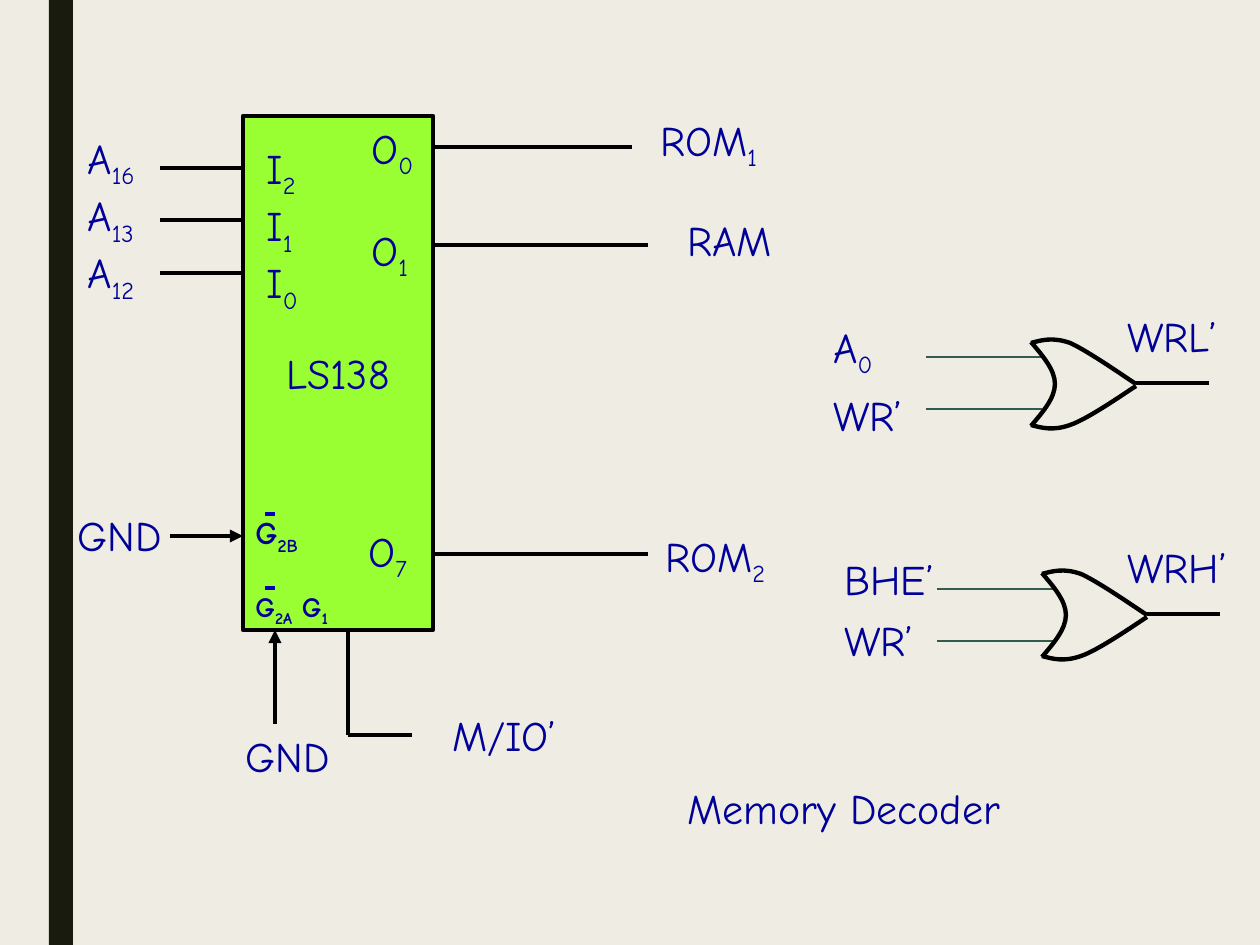
from lxml import etree
from pptx import Presentation
from pptx.dml.color import RGBColor
from pptx.enum.shapes import MSO_CONNECTOR, MSO_SHAPE
from pptx.enum.text import MSO_ANCHOR, MSO_AUTO_SIZE, PP_ALIGN
from pptx.oxml.ns import qn
from pptx.util import Inches, Pt

PX = Inches(1) / 126
STRAIGHT = MSO_CONNECTOR.STRAIGHT
RECTANGLE = MSO_SHAPE.RECTANGLE
GROW = MSO_AUTO_SIZE.SHAPE_TO_FIT_TEXT
FONT = "Comic Neue"
CREAM = RGBColor(0xEF, 0xED, 0xE3)
DARK = RGBColor(0x19, 0x1B, 0x0E)
LIME = RGBColor(0x99, 0xFF, 0x33)
BLACK = RGBColor(0x00, 0x00, 0x00)
NAVY = RGBColor(0x00, 0x00, 0x99)
BLUE = RGBColor(0x00, 0x00, 0xBC)
TEAL = RGBColor(0x31, 0x5C, 0x4F)

prs = Presentation()
prs.slide_width = round(1260 * PX)
prs.slide_height = round(945 * PX)
slide = prs.slides.add_slide(prs.slide_layouts[6])
slide.background.fill.solid()
slide.background.fill.fore_color.rgb = CREAM
shapes = slide.shapes


def add_label(left, top, width, height, lines, size=24, bold=False, after=0):
    """Place signal names, one paragraph each; "_" switches subscript on and off."""
    box = shapes.add_textbox(*(round(v * PX) for v in (left, top, width, height)))
    frame = box.text_frame
    frame.word_wrap = True
    frame.auto_size = GROW
    for number, line in enumerate(lines):
        paragraph = frame.paragraphs[0] if number == 0 else frame.add_paragraph()
        paragraph.space_after = Pt(after)
        for position, text in enumerate(line.split("_")):
            run = paragraph.add_run()
            run.text = text
            run.font.name = FONT
            run.font.size = Pt(size)
            run.font.bold = bold
            run.font.color.rgb = NAVY
            if position % 2:
                run._r.get_or_add_rPr().set("baseline", "-25000")


def add_wire(x1, y1, x2, y2, color=BLACK, width=2.5, arrow=False):
    wire = shapes.add_connector(STRAIGHT, *(round(v * PX) for v in (x1, y1, x2, y2)))
    wire.line.color.rgb = color
    wire.line.width = Pt(width)
    if arrow:
        etree.SubElement(wire.line._get_or_add_ln(), qn("a:tailEnd"), type="triangle")
    etree.SubElement(wire._element.spPr, qn("a:effectLst"))


# Side bar
bar = shapes.add_shape(RECTANGLE, *(round(v * PX) for v in (49, 0, 24, 945)))
bar.shadow.inherit = False
bar.fill.solid()
bar.fill.fore_color.rgb = DARK
bar.line.fill.background()

# Decoder chip
chip = shapes.add_shape(RECTANGLE, *(round(v * PX) for v in (243, 116, 190, 514)))
chip.shadow.inherit = False
chip.fill.solid()
chip.fill.fore_color.rgb = LIME
chip.line.color.rgb = BLACK
chip.line.width = Pt(2.5)
chip.text_frame.word_wrap = False
chip.text_frame.vertical_anchor = MSO_ANCHOR.MIDDLE
chip_title = chip.text_frame.paragraphs[0]
chip_title.alignment = PP_ALIGN.CENTER
chip_name = chip_title.add_run()
chip_name.text = "LS138"
chip_name.font.name = FONT
chip_name.font.size = Pt(24)
chip_name.font.color.rgb = NAVY

# Address inputs, wrapped one to a line by their narrow boxes
for y in (168, 220, 273):
    add_wire(160, y, 243, y)
add_label(75, 126, 94, 165, ["A_16 _A_13 _A_12"])
add_label(254, 136, 84, 164, ["I_2 _I_1_ I_0"])

# Enable inputs
add_wire(275, 724, 275, 630, arrow=True)
add_wire(170, 536, 243, 536, arrow=True)
add_wire(348, 630, 348, 735)
add_wire(348, 735, 412, 735)
for y in (514, 588):
    add_wire(265, y, 275, y, BLUE)
add_label(243, 583, 179, 47, ["G_2A_ G_1"], size=16, bold=True)
add_label(243, 507, 94, 50, ["G_2B"], size=18, bold=True)
add_label(233, 724, 126, 63, ["GND"])
add_label(65, 503, 140, 64, ["GND"])
add_label(440, 703, 192, 63, ["M/IO’"])

# Outputs: pin, pin left and top, wire end and height, device, device left and top
outputs = [
    ("O_0", 359, 116, 632, 147, "ROM_1", 648, 108),
    ("O_1", 359, 218, 648, 245, "RAM", 675, 208),
    ("O_7", 356, 519, 648, 554, "ROM_2", 653, 524),
]
for pin, pin_x, pin_y, wire_x, wire_y, device, device_x, device_y in outputs:
    add_wire(432, wire_y, wire_x, wire_y)
    add_label(pin_x, pin_y, 84, 63, [pin])
    add_label(device_x, device_y, 204, 63, [device])

# OR gates; each outline is a start followed by cubic Bezier triples
gate_outlines = [
    [(0, 0), (12, 14), (24, 28), (24, 42), (24, 56), (12, 70), (0, 84)],
    [(0, 1), (11, -2), (22, -5), (39, 1), (57, 9), (94, 35), (105, 42)],
    [(0, 83), (11, 86), (22, 89), (39, 83), (57, 77), (94, 51), (105, 44)],
]
gates = [
    (1031, 342, (357, 409), 315, ["A_0", "WR’"], "WRL’"),
    (1042, 573, (589, 641), 547, ["BHE’", "WR’"], "WRH’"),
]
for gate_x, gate_y, input_ys, inputs_top, inputs, output in gates:
    for y in input_ys:
        add_wire(gate_x - 105, y, gate_x + 11, y, TEAL, 1)
    add_label(gate_x - 210, inputs_top, 126, 125, inputs, after=6)
    for outline in gate_outlines:
        points = [(round((gate_x + x) * PX), round((gate_y + y) * PX)) for x, y in outline]
        builder = shapes.build_freeform(*points[0])
        builder.add_line_segments(points[1:], close=False)
        edge = builder.convert_to_shape()
        # Join every three line segments into one Bezier curve
        segments = list(edge._element.iter(qn("a:lnTo")))
        for first in range(0, len(segments), 3):
            curve = segments[first]
            curve.tag = qn("a:cubicBezTo")
            for segment in segments[first + 1:first + 3]:
                curve.append(segment[0])
                segment.getparent().remove(segment)
        edge.shadow.inherit = False
        edge.fill.background()
        edge.line.color.rgb = BLACK
        edge.line.width = Pt(2.5)
    add_wire(gate_x + 105, gate_y + 41, gate_x + 178, gate_y + 41)
    add_label(1115, gate_y - 38, 136, 64, [output])

add_label(675, 776, 544, 64, ["Memory Decoder"])

prs.save("out.pptx")
